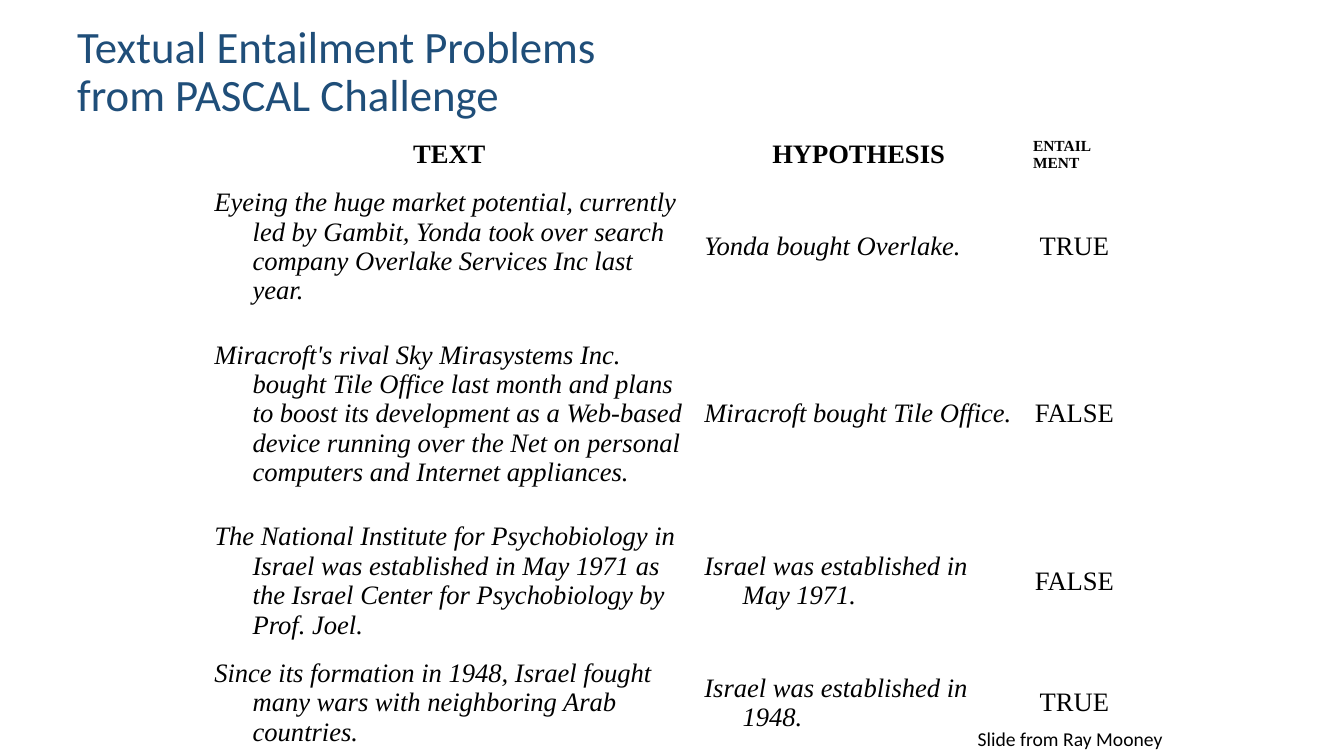
from pptx import Presentation, util as u
from pptx.dml.color import RGBColor
from pptx.enum import text as t

WIDTH, HEIGHT = u.Inches(13.33), u.Inches(7.5)
NAVY = RGBColor(0x1F, 0x4E, 0x79)
BLACK = RGBColor(0, 0, 0)
SANS, SERIF = "Calibri", "Times New Roman"
HANGING = u.Inches(0.38)

# Table grid, in inches
COLUMNS = (4.86, 3.26, 1.02)
ROWS = (0.46, 1.33, 1.95, 1.33, 1.03)

HEADINGS = ("TEXT", "HYPOTHESIS", "ENTAIL\nMENT")
PROBLEMS = (
    ("Eyeing the huge market potential, currently led by Gambit, Yonda took over "
     "search company Overlake Services Inc last year.",
     "Yonda bought Overlake.", "TRUE"),
    ("Miracroft's rival Sky Mirasystems Inc. bought Tile Office last month and plans "
     "to boost its development as a Web-based device running over the Net on "
     "personal computers and Internet appliances.",
     "Miracroft bought Tile Office.", "FALSE"),
    ("The National Institute for Psychobiology in Israel was established in May "
     "1971 as the Israel Center for Psychobiology by Prof. Joel.",
     "Israel was established in May 1971.", "FALSE"),
    ("Since its formation in 1948, Israel fought many wars with neighboring Arab "
     "countries.",
     "Israel was established in 1948.", "TRUE"),
)


def write(frame, content, font=SERIF, size=19, color=BLACK, bold=False,
          italic=False, align=t.PP_ALIGN.LEFT, spacing=None, hanging=0):
    """Fill a text frame; each line of content becomes a paragraph."""
    for number, line in enumerate(content.split("\n")):
        paragraph = frame.add_paragraph() if number else frame.paragraphs[0]
        paragraph.text = line
        paragraph.alignment = align
        if spacing:
            paragraph.line_spacing = spacing
        if hanging:
            properties = paragraph._p.get_or_add_pPr()
            properties.set("marL", str(hanging))
            properties.set("indent", str(-hanging))
        for run in paragraph.runs:
            style = run.font
            style.name, style.size = font, u.Pt(size)
            style.bold, style.italic = bold, italic
            style.color.rgb = color


def add_text(slide, content, left, top, width, height, wrap=True,
             anchor=t.MSO_ANCHOR.TOP, **style):
    """Add a text box placed by shares of the slide's size."""
    box = slide.shapes.add_textbox(int(WIDTH * left), int(HEIGHT * top),
                                   int(WIDTH * width), int(HEIGHT * height))
    box.text_frame.word_wrap = wrap
    box.text_frame.vertical_anchor = anchor
    write(box.text_frame, content, **style)


def fill_cell(cell, content, **style):
    cell.fill.background()
    cell.vertical_anchor = t.MSO_ANCHOR.MIDDLE
    write(cell.text_frame, content, hanging=HANGING, **style)


def add_problem_table(slide, left, top):
    table = slide.shapes.add_table(
        len(ROWS), len(COLUMNS), int(WIDTH * left), int(HEIGHT * top),
        u.Inches(sum(COLUMNS)), u.Inches(sum(ROWS))).table
    table.first_row = table.horz_banding = False
    for column, width in zip(table.columns, COLUMNS):
        column.width = u.Inches(width)
    for row, height in zip(table.rows, ROWS):
        row.height = u.Inches(height)

    # Headings: the narrow last column is smaller and left aligned
    center = t.PP_ALIGN.CENTER
    last = len(COLUMNS) - 1
    for index, heading in enumerate(HEADINGS):
        style = {"size": 11} if index == last else {"align": center}
        fill_cell(table.cell(0, index), heading, bold=True, **style)

    # Problems: italic sentences, centred verdicts
    for row, problem in enumerate(PROBLEMS, start=1):
        for index, content in enumerate(problem):
            style = {"align": center} if index == last else {"italic": True}
            fill_cell(table.cell(row, index), content, **style)


def main():
    presentation = Presentation()
    presentation.slide_width, presentation.slide_height = WIDTH, HEIGHT
    slide = presentation.slides.add_slide(presentation.slide_layouts[6])

    # Title
    add_text(slide, "Textual Entailment Problems \vfrom PASCAL Challenge",
             0.05, 0.013, 0.9, 0.167, anchor=t.MSO_ANCHOR.MIDDLE,
             font=SANS, size=32, color=NAVY, spacing=0.9)

    # Entailment problems
    add_problem_table(slide, 0.152, 0.173)

    # Credit
    add_text(slide, "Slide from Ray Mooney", 0.72, 0.955, 0.154, 0.045,
             wrap=False, font=SANS, size=14)

    presentation.save("out.pptx")


if __name__ == "__main__":
    main()
